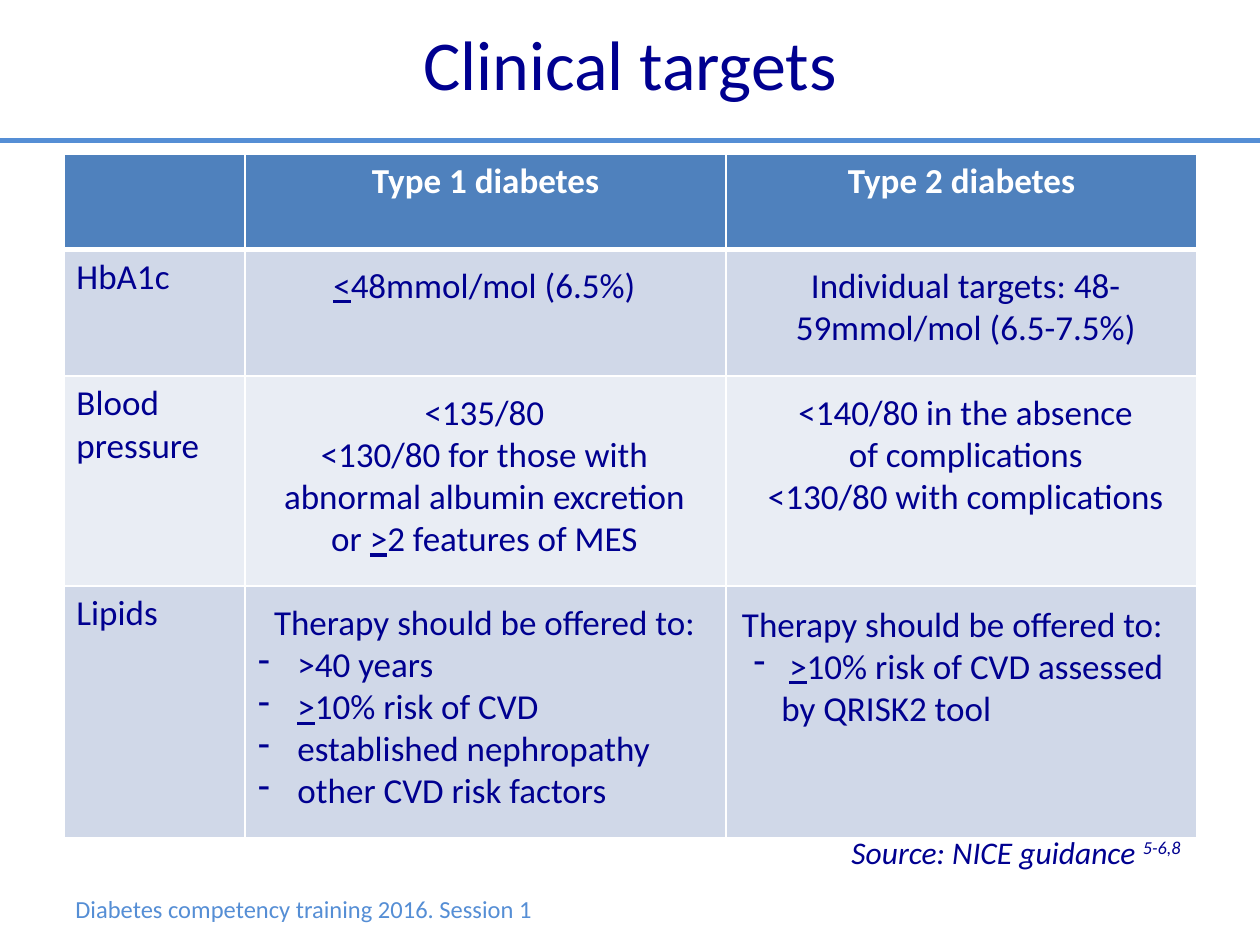
from dataclasses import dataclass
from lxml import etree
from pptx import Presentation
from pptx.dml.color import RGBColor
from pptx.enum.shapes import MSO_CONNECTOR
from pptx.enum.text import MSO_AUTO_SIZE, PP_ALIGN
from pptx.oxml.ns import qn
from pptx.util import Pt

LEFT, CENTER = PP_ALIGN.LEFT, PP_ALIGN.CENTER
GROW, FIXED = MSO_AUTO_SIZE.SHAPE_TO_FIT_TEXT, MSO_AUTO_SIZE.NONE
STRAIGHT = MSO_CONNECTOR.STRAIGHT


@dataclass(frozen=True)
class Theme:
    font: str = "Calibri"
    navy: str = "000090"
    sky: str = "558ED5"
    header: str = "4F81BD"
    band_dark: str = "D0D8E8"
    band_light: str = "E9EDF4"
    white: str = "FFFFFF"
    title_size: int = 40
    body_size: int = 20
    source_size: int = 18
    footer_size: int = 14


THEME = Theme()

TITLE = "Clinical targets"
FOOTER = "Diabetes competency training 2016. Session 1"
SOURCE, REFERENCES = "Source: NICE guidance ", "5-6,8"
HEADERS = ["", "Type 1 diabetes", "Type 2 diabetes"]
ROW_LABELS = ["HbA1c", "Blood pressure", "Lipids"]

TABLE_LEFT, TABLE_TOP = 36.5, 88
COLUMN_WIDTHS = [103.5, 275, 269]
ROW_HEIGHTS = [54.5, 72.5, 120, 144]
TYPE_1, TYPE_2 = (140.4, 272.9), (419.8, 264.2)

# Text between tildes is underlined.
TARGETS = [
    (TYPE_1, 146.9, 32, CENTER, ["~<~48mmol/mol (6.5%)"], [], 0),
    (TYPE_2, 146.9, 55.4, CENTER,
     ["Individual targets: 48-59mmol/mol (6.5-7.5%)"], [], 0),
    (TYPE_1, 219.6, 104.4, CENTER,
     ["<135/80", "<130/80 for those with", "abnormal albumin excretion",
      "or ~>~2 features of MES"], [], 0),
    (TYPE_2, 219.6, 80, CENTER,
     ["<140/80 in the absence", "of complications",
      "<130/80 with complications"], [], 0),
    (TYPE_1, 339.8, 128.2, CENTER, ["Therapy should be offered to:"],
     [">40 years", "~>~10% risk of CVD", "established nephropathy",
      "other CVD risk factors"], 22.5),
    ((416.9, 267.1), 340.6, 80, LEFT, ["Therapy should be offered to:"],
     [" ~>~10% risk of CVD assessed by QRISK2 tool"], 15.8),
]
BULLET_INDENT = 22.5


def color(value):
    return RGBColor.from_string(value)


def style(para, size, ink=THEME.navy, align=LEFT, bold=False, italic=False):
    para.alignment = align
    font = para.font
    font.name, font.size = THEME.font, Pt(size)
    font.color.rgb = color(ink)
    font.bold, font.italic = bold, italic


def add_box(page, left, top, width, height, wrap=True, fit=GROW):
    box = page.shapes.add_textbox(Pt(left), Pt(top), Pt(width), Pt(height))
    box.text_frame.word_wrap = wrap
    box.text_frame.auto_size = fit
    return box.text_frame


def add_marked_text(para, text):
    for index, part in enumerate(text.split("~")):
        if part:
            span = para.add_run()
            span.text = part
            if index % 2:
                span.font.underline = True


def add_bullet(para, hanging):
    properties = para._p.get_or_add_pPr()
    properties.set("marL", str(Pt(BULLET_INDENT)))
    properties.set("indent", str(-Pt(hanging)))
    etree.SubElement(properties, qn("a:buChar"), char="-")


def add_target(page, column, top, height, align, lines, bullets, hanging):
    frame = add_box(page, column[0], top, column[1], height)
    for index, text in enumerate(lines + bullets):
        para = frame.add_paragraph() if index else frame.paragraphs[0]
        add_marked_text(para, text)
        bulleted = index >= len(lines)
        if bulleted:
            add_bullet(para, hanging)
        style(para, THEME.body_size, align=LEFT if bulleted else align)


def set_borders(cell, bottom, top):
    properties = cell._tc.get_or_add_tcPr()
    widths = {"lnL": 1, "lnR": 1, "lnT": top, "lnB": bottom}
    for index, (side, width) in enumerate(widths.items()):
        line = etree.Element(qn(f"a:{side}"), w=str(Pt(width)))
        fill = etree.SubElement(line, qn("a:solidFill"))
        etree.SubElement(fill, qn("a:srgbClr"), val=THEME.white)
        properties.insert(index, line)


def add_targets_table(page):
    rows = [HEADERS] + [[label, "", ""] for label in ROW_LABELS]
    table = page.shapes.add_table(
        len(rows), len(HEADERS), Pt(TABLE_LEFT), Pt(TABLE_TOP),
        Pt(sum(COLUMN_WIDTHS)), Pt(sum(ROW_HEIGHTS))).table
    for column, width in zip(table.columns, COLUMN_WIDTHS):
        column.width = Pt(width)
    for r, (texts, height) in enumerate(zip(rows, ROW_HEIGHTS)):
        table.rows[r].height = Pt(height)
        is_header = r == 0
        band = THEME.band_dark if r % 2 else THEME.band_light
        for c, text in enumerate(texts):
            cell = table.cell(r, c)
            cell.fill.solid()
            cell.fill.fore_color.rgb = color(THEME.header if is_header else band)
            set_borders(cell, bottom=3 if is_header else 1, top=3 if r == 1 else 1)
            cell.text = text
            style(cell.text_frame.paragraphs[0], THEME.body_size,
                  THEME.white if is_header else THEME.navy,
                  CENTER if is_header else LEFT, bold=is_header)


def add_rule(page, y, width):
    rule = page.shapes.add_connector(STRAIGHT, 0, Pt(y), Pt(width), Pt(y))
    rule.line.color.rgb = color(THEME.sky)
    rule.line.width = Pt(3)
    etree.SubElement(rule._element.spPr, qn("a:effectLst"))


def main():
    deck = Presentation()
    deck.slide_width, deck.slide_height = Pt(720), Pt(540)
    page = deck.slides.add_slide(deck.slide_layouts[6])

    add_rule(page, 80.5, 720)
    footer = add_box(page, 36, 507.6, 278.6, 24.5, wrap=False).paragraphs[0]
    footer.text = FOOTER
    style(footer, THEME.footer_size, THEME.sky)

    title = add_box(page, 36, 8, 648, 72.7, fit=FIXED).paragraphs[0]
    title.text = TITLE
    style(title, THEME.title_size, align=CENTER)

    add_targets_table(page)

    source = add_box(page, 479.5, 472.3, 211, 29, wrap=False).paragraphs[0]
    source.text = SOURCE
    references = source.add_run()
    references.text = REFERENCES
    references.font._element.set("baseline", "30000")
    style(source, THEME.source_size, italic=True)

    for target in TARGETS:
        add_target(page, *target)
    deck.save("out.pptx")


if __name__ == "__main__":
    main()
